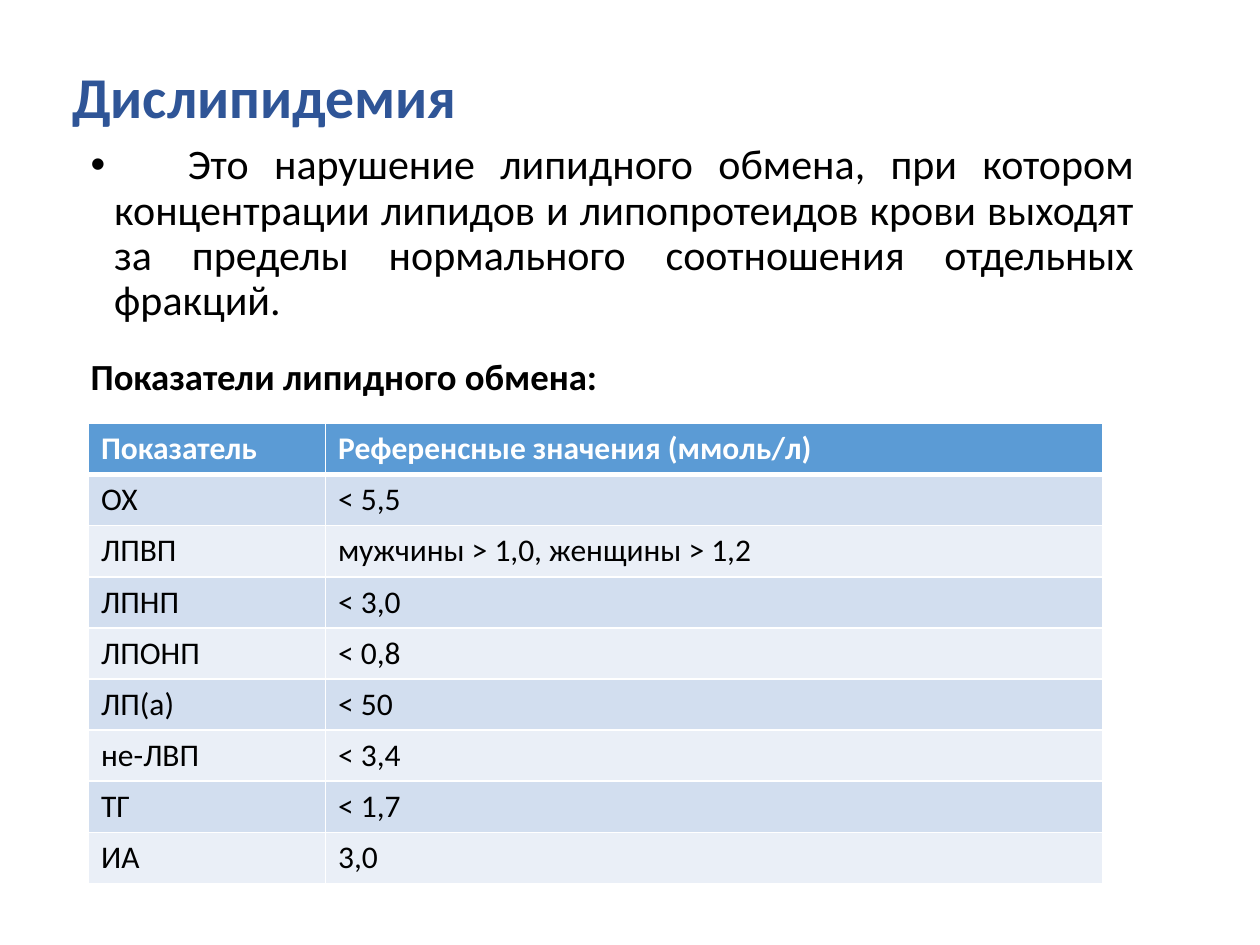
from lxml import etree
from pptx import Presentation
from pptx.dml.color import RGBColor
from pptx.enum import text
from pptx.oxml.ns import qn
from pptx.util import Pt

# Content
TITLE = "Дислипидемия"
DEFINITION = ("Это нарушение липидного обмена, при котором концентрации липидов "
              "и липопротеидов крови выходят за пределы нормального соотношения "
              "отдельных фракций.")
SUBHEAD = "Показатели липидного обмена:"
ROWS = [
    ("Показатель", "Референсные значения (ммоль/л)"),
    ("ОХ", "< 5,5"),
    ("ЛПВП", "мужчины > 1,0, женщины > 1,2"),
    ("ЛПНП", "< 3,0"),
    ("ЛПОНП", "< 0,8 "),
    ("ЛП(а)", "< 50"),
    ("не-ЛВП", "< 3,4"),
    ("ТГ", "< 1,7"),
    ("ИА", "3,0"),
]

# Style, lengths in points
FONT = "Calibri"
HEADER, BANDS = "5B9BD5", ("D2DEEF", "EAEFF7")
COL_WIDTHS = (135.4, 444.2)
ROW_HEIGHT = 29.2
HANG = 13.5
FIRST_WORD = 55.5


def color(value):
    return RGBColor.from_string(value)


def style(p, size, value, bold=False):
    f = p.font
    f.name, f.size, f.bold = FONT, Pt(size), bold
    f.color.rgb = color(value)


def place(sp, left, top, width, height):
    sp.left, sp.top, sp.width, sp.height = map(Pt, (left, top, width, height))
    sp.text_frame.auto_size = text.MSO_AUTO_SIZE.NONE


def border(cell, side, width):
    ln = etree.SubElement(cell._tc.get_or_add_tcPr(), qn("a:" + side), w=str(Pt(width)))
    fill = etree.SubElement(ln, qn("a:solidFill"))
    etree.SubElement(fill, qn("a:srgbClr"), val="FFFFFF")


prs = Presentation()
prs.slide_width, prs.slide_height = Pt(720), Pt(540)
s = prs.slides.add_slide(prs.slide_layouts[1])
title, body = s.placeholders

# Title
place(title, 34, 39.5, 588, 34.5)
tf = title.text_frame
tf.text = TITLE
tf.vertical_anchor = text.MSO_ANCHOR.MIDDLE
p = tf.paragraphs[0]
p.alignment, p.line_spacing = text.PP_ALIGN.LEFT, 0.9
style(p, 33, "2F5597", True)

# Definition and table heading
place(body, 44.6, 78.5, 610.6, 427.7)
tf = body.text_frame
tf.text = "\t" + DEFINITION
definition, subhead = tf.paragraphs[0], tf.add_paragraph()
subhead.text = SUBHEAD
for p in (definition, subhead):
    p.line_spacing, p.space_before = 0.9, Pt(7.5)
    pPr = p._p.get_or_add_pPr()
    pPr.set("marL", str(Pt(HANG)))
    pPr.set("indent", str(-Pt(HANG)))
definition.alignment, definition.space_after = text.PP_ALIGN.JUSTIFY, Pt(12)
style(definition, 24, "000000")
style(subhead, 21, "000000", True)

# Bullet and first-line tab for the definition, no bullet for the heading
pPr = definition._p.pPr
bullet = etree.Element(qn("a:buChar"), char="•")
tabs = etree.Element(qn("a:tabLst"))
etree.SubElement(tabs, qn("a:tab"), pos=str(Pt(FIRST_WORD)), algn="l")
pPr.find(qn("a:defRPr")).addprevious(bullet)
bullet.addnext(tabs)
subhead._p.pPr.find(qn("a:defRPr")).addprevious(etree.Element(qn("a:buNone")))

# Reference values
table = s.shapes.add_table(len(ROWS), len(COL_WIDTHS), Pt(50.6), Pt(242),
                           Pt(sum(COL_WIDTHS)), Pt(ROW_HEIGHT * len(ROWS))).table
for col, width in zip(table.columns, COL_WIDTHS):
    col.width = Pt(width)
for i, row in enumerate(ROWS):
    table.rows[i].height = Pt(ROW_HEIGHT)
    for j, value in enumerate(row):
        cell = table.cell(i, j)
        cell.text = value
        style(cell.text_frame.paragraphs[0], 18, "000000" if i else "FFFFFF", i == 0)
        for side in ("lnL", "lnR", "lnT", "lnB"):
            thick = (i, side) in ((0, "lnB"), (1, "lnT"))
            border(cell, side, 3 if thick else 1)
        cell.fill.solid()
        cell.fill.fore_color.rgb = color(BANDS[(i - 1) % 2] if i else HEADER)

prs.save("out.pptx")
